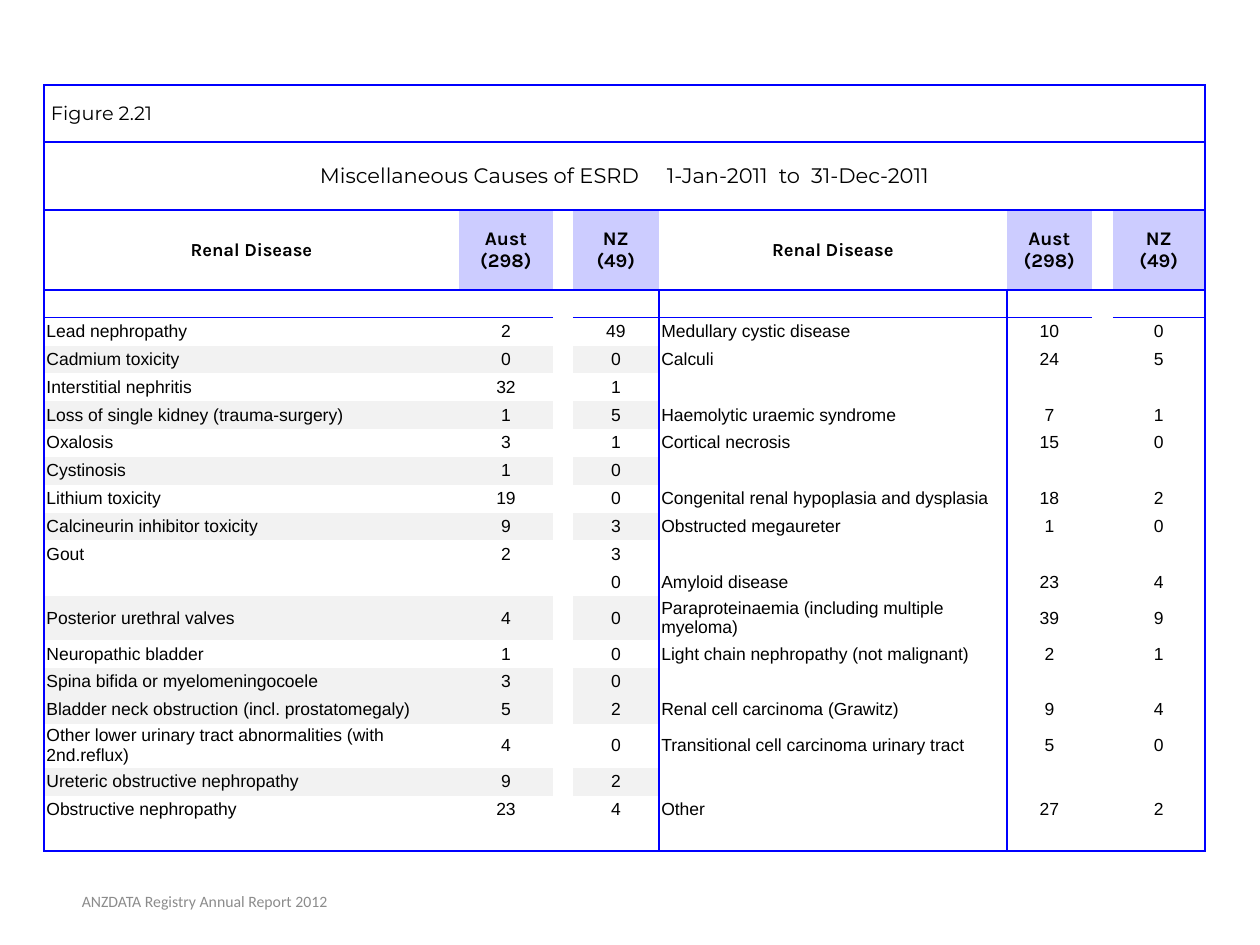
from lxml import etree
from pptx import Presentation
from pptx import util as u
from pptx.dml.color import RGBColor
from pptx.enum import text
from pptx.oxml.ns import qn

PX = 914400 // 126
BLACK = RGBColor(0x00, 0x00, 0x00)
BLUE = RGBColor(0x00, 0x00, 0xFF)
LAVENDER = RGBColor(0xCC, 0xCC, 0xFF)
STRIPE = RGBColor(0xF2, 0xF2, 0xF2)
GREY = RGBColor(0x8C, 0x8C, 0x8C)
NO_STYLE = "{2D5ABB26-0587-4C30-8999-92F81FD0307C}"

FIGURE = "Figure 2.21"
TITLE = [("Miscellaneous Causes of ESRD", 0), (" ", 12.6), ("1-Jan-2011", 0),
         (" ", 3.1), ("to", 0), (" ", 3.1), ("31-Dec-2011", 0)]
HEADINGS = ["Renal Disease", "Aust\n(298)", "NZ\n(49)"]
LEFT_CAUSES = [
    ("Lead nephropathy", 2, 49),
    ("Cadmium toxicity", 0, 0),
    ("Interstitial nephritis", 32, 1),
    ("Loss of single kidney (trauma-surgery)", 1, 5),
    ("Oxalosis", 3, 1),
    ("Cystinosis", 1, 0),
    ("Lithium toxicity", 19, 0),
    ("Calcineurin inhibitor toxicity", 9, 3),
    ("Gout", 2, 3),
    ("", "", 0),
    ("Posterior urethral valves", 4, 0),
    ("Neuropathic bladder", 1, 0),
    ("Spina bifida or myelomeningocoele", 3, 0),
    ("Bladder neck obstruction (incl. prostatomegaly)", 5, 2),
    ("Other lower urinary tract abnormalities (with 2nd.reflux)", 4, 0),
    ("Ureteric obstructive nephropathy", 9, 2),
    ("Obstructive nephropathy", 23, 4),
]
BLANK = ("", "", "")
RIGHT_CAUSES = [
    ("Medullary cystic disease", 10, 0),
    ("Calculi", 24, 5),
    BLANK,
    ("Haemolytic uraemic syndrome", 7, 1),
    ("Cortical necrosis", 15, 0),
    BLANK,
    ("Congenital renal hypoplasia and dysplasia", 18, 2),
    ("Obstructed megaureter", 1, 0),
    BLANK,
    ("Amyloid disease", 23, 4),
    ("Paraproteinaemia (including multiple myeloma)", 39, 9),
    ("Light chain nephropathy (not malignant)", 2, 1),
    BLANK,
    ("Renal cell carcinoma (Grawitz)", 9, 4),
    ("Transitional cell carcinoma urinary tract", 5, 0),
    BLANK,
    ("Other", 27, 2),
]
STRIPED = {1, 3, 5, 7, 10, 12, 13, 15}
WIDTHS = [415, 94, 20, 86, 348, 85, 21, 92]
HEAD_HEIGHTS = [57, 68, 80]
BODY_HEIGHT = 529
FIRST_BODY = len(HEAD_HEIGHTS)
FIRST_CAUSE = FIRST_BODY + 1
LAST = FIRST_CAUSE + len(LEFT_CAUSES)
HALVES = [(0, 1, 3), (4, 5, 7)]
GAPS = (2, 6)


def write(frame, content, font="Arial", size=10, bold=False, color=BLACK, center=False):
    pieces = content if isinstance(content, list) else None
    for index, line in enumerate([""] if pieces else content.split("\n")):
        para = frame.paragraphs[0] if index == 0 else frame.add_paragraph()
        para.alignment = text.PP_ALIGN.CENTER if center else text.PP_ALIGN.LEFT
        for words, tracking in pieces or [(line, 0)]:
            span = para.add_run()
            span.text = words
            span.font.name, span.font.size = font, u.Pt(size)
            span.font.bold, span.font.color.rgb = bold, color
            if tracking:
                span.font._element.set("spc", str(round(tracking * 100)))


def shrink_empty(cell):
    for para in cell.text_frame.paragraphs:
        if not para.runs:
            etree.SubElement(para._p, qn("a:endParaRPr")).set("sz", "1000")


def draw_borders(cell, sides):
    properties = cell._tc.get_or_add_tcPr()
    for index, side in enumerate(s for s in "LRTB" if s in sides):
        line = etree.Element(qn(f"a:ln{side}"), w=str(u.Pt(1)))
        fill = etree.SubElement(line, qn("a:solidFill"))
        etree.SubElement(fill, qn("a:srgbClr")).set("val", str(BLUE))
        properties.insert(index, line)


def border_sides(row, column):
    if row < 2:
        return "LRTB"
    sides = "TB" if row == 2 else ""
    if row == FIRST_BODY:
        sides += "T"
    if row == LAST or (row == FIRST_BODY and column in GAPS):
        sides += "B"
    if column == 0 or (column == 4 and row >= FIRST_BODY):
        sides += "L"
    if column == 7 or (column == 3 and row >= FIRST_BODY):
        sides += "R"
    return sides


def cell_fill(row, column):
    if row == 2 and column in (1, 3, 5, 7):
        return LAVENDER
    if row - FIRST_CAUSE in STRIPED and column in HALVES[0]:
        return STRIPE
    return None


def build_table(page):
    body_rows = LAST - FIRST_BODY + 1
    heights = [h * PX for h in HEAD_HEIGHTS] + [BODY_HEIGHT * PX // body_rows] * body_rows
    frame = page.shapes.add_table(len(heights), len(WIDTHS), 44 * PX, 85 * PX,
                                  sum(WIDTHS) * PX, sum(heights))
    table = frame.table
    table.first_row = table.horz_banding = False
    table._tbl.tblPr.find(qn("a:tableStyleId")).text = NO_STYLE
    for column, width in zip(table.columns, WIDTHS):
        column.width = width * PX
    for row, height in zip(table.rows, heights):
        row.height = height

    for row in range(2):
        table.cell(row, 0).merge(table.cell(row, 7))
    for column in GAPS:
        table.cell(FIRST_BODY, column).merge(table.cell(LAST, column))

    write(table.cell(0, 0).text_frame, FIGURE, font="Montserrat", size=11)
    write(table.cell(1, 0).text_frame, TITLE, font="Montserrat", size=12, center=True)
    for columns, causes in zip(HALVES, (LEFT_CAUSES, RIGHT_CAUSES)):
        for column, heading in zip(columns, HEADINGS):
            size = 10.5 if column == columns[0] else 11
            write(table.cell(2, column).text_frame, heading, font="Karla",
                  size=size, bold=True, center=True)
        for row, cause in enumerate(causes, FIRST_CAUSE):
            for column, value in zip(columns, cause):
                if value != "":
                    write(table.cell(row, column).text_frame, str(value),
                          center=column != columns[0])

    for row in range(len(heights)):
        for column in range(len(WIDTHS)):
            cell = table.cell(row, column)
            cell.vertical_anchor = text.MSO_ANCHOR.MIDDLE
            cell.margin_left = cell.margin_right = u.Inches(0.02)
            cell.margin_top = cell.margin_bottom = u.Inches(0.02)
            fill = cell_fill(row, column)
            if fill is None:
                cell.fill.background()
            else:
                cell.fill.solid()
                cell.fill.fore_color.rgb = fill
            draw_borders(cell, border_sides(row, column))
            shrink_empty(cell)
    table.cell(0, 0).margin_left = 7 * PX


def main():
    deck = Presentation()
    deck.slide_width, deck.slide_height = 1260 * PX, 945 * PX
    page = deck.slides.add_slide(deck.slide_layouts[6])
    build_table(page)
    box = page.shapes.add_textbox(5 * PX, 876 * PX, 399 * PX, 50 * PX)
    box.text_frame.word_wrap = True
    box.text_frame.vertical_anchor = text.MSO_ANCHOR.MIDDLE
    write(box.text_frame, "ANZDATA Registry Annual Report 2012", font="Calibri",
          size=9, color=GREY, center=True)
    deck.save("out.pptx")


if __name__ == "__main__":
    main()
